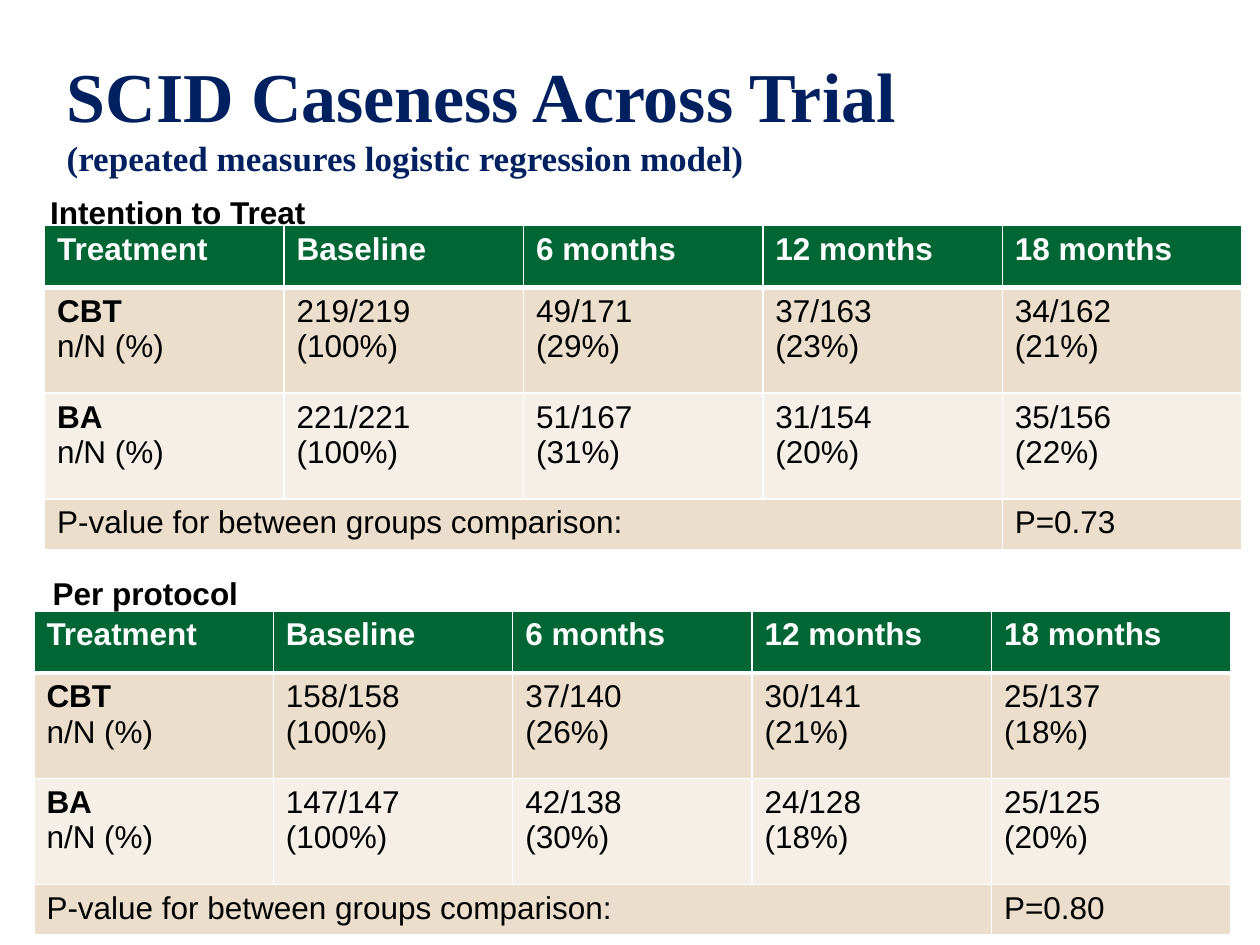
from dataclasses import dataclass

import pptx
import pptx.dml.color
import pptx.enum.text
import pptx.oxml
import pptx.oxml.ns
import pptx.util
from lxml import etree

Pt = pptx.util.Pt


@dataclass(frozen=True)
class Theme:
    title_font: str = "Times New Roman"
    body_font: str = "Arial"
    navy: str = "002060"
    green: str = "006633"
    tan: str = "ECDECC"
    cream: str = "F6EFE7"
    white: str = "FFFFFF"
    black: str = "000000"
    title_size: float = 40
    subtitle_size: float = 20
    body_size: float = 18
    thin_line: float = 1
    thick_line: float = 3


@dataclass(frozen=True)
class Analysis:
    label: str
    label_left: float
    label_top: float
    table_left: float
    table_top: float
    cbt: tuple[str, ...]
    ba: tuple[str, ...]
    p_value: str


THEME = Theme()
HEADER = ("Treatment", "Baseline", "6 months", "12 months", "18 months")
COLUMN_WIDTH = 136.8
ROW_HEIGHTS = (35.3, 60.5, 60.5, 23)
ROW_FILLS = (THEME.green, THEME.tan, THEME.cream, THEME.tan)
TABLE_HEIGHT = 185

ANALYSES = (
    Analysis("Intention to Treat", 21.6, 106.6, 25.5, 128.9,
             ("219/219\n(100%)", "49/171\n(29%)", "37/163\n(23%)", "34/162\n(21%)"),
             ("221/221\n(100%)", "51/167\n(31%)", "31/154\n(20%)", "35/156\n(22%)"),
             "P=0.73"),
    Analysis("Per protocol", 23, 324.7, 19.4, 349.2,
             ("158/158\n(100%)", "37/140\n(26%)", "30/141\n(21%)", "25/137\n(18%)"),
             ("147/147\n(100%)", "42/138\n(30%)", "24/128\n(18%)", "25/125\n(20%)"),
             "P=0.80"),
)


def set_font(paragraph, name: str, color: str, bold: bool, size: float | None = None) -> None:
    font = paragraph.font
    font.name = name
    font.bold = bold
    font.color.rgb = pptx.dml.color.RGBColor.from_string(color)
    if size is not None:
        font.size = Pt(size)


def add_text_box(slide, left: float, top: float, width: float, height: float):
    shape = slide.shapes.add_textbox(Pt(left), Pt(top), Pt(width), Pt(height))
    shape.text_frame.word_wrap = True
    return shape.text_frame


def add_title(slide) -> None:
    frame = add_text_box(slide, 31, 20.9, 671.8, 90)
    frame.vertical_anchor = pptx.enum.text.MSO_ANCHOR.MIDDLE
    paragraph = frame.paragraphs[0]
    set_font(paragraph, THEME.title_font, THEME.navy, True)
    title = paragraph.add_run()
    title.text = "SCID Caseness Across Trial"
    title.font.size = Pt(THEME.title_size)
    paragraph.add_line_break()
    subtitle = paragraph.add_run()
    subtitle.text = "(repeated measures logistic regression model)"
    subtitle.font.size = Pt(THEME.subtitle_size)


def set_borders(cell, top: float, bottom: float) -> None:
    properties = cell._tc.get_or_add_tcPr()
    widths = {"L": THEME.thin_line, "R": THEME.thin_line, "T": top, "B": bottom}
    for side, width in widths.items():
        line = etree.SubElement(properties, pptx.oxml.ns.qn(f"a:ln{side}"), w=str(Pt(width)))
        fill = etree.SubElement(line, pptx.oxml.ns.qn("a:solidFill"))
        etree.SubElement(fill, pptx.oxml.ns.qn("a:srgbClr"), val=THEME.white)


def style_cell(cell, row: int, column: int) -> None:
    # The thick rule lies between the header and the first data row
    set_borders(cell,
                top=THEME.thick_line if row == 1 else THEME.thin_line,
                bottom=THEME.thick_line if row == 0 else THEME.thin_line)
    cell.fill.solid()
    cell.fill.fore_color.rgb = pptx.dml.color.RGBColor.from_string(ROW_FILLS[row])
    color = THEME.white if row == 0 else THEME.black
    for index, paragraph in enumerate(cell.text_frame.paragraphs):
        is_group_name = row in (1, 2) and column == 0 and index == 0
        set_font(paragraph, THEME.body_font, color, row == 0 or is_group_name,
                 THEME.body_size)


def add_analysis(slide, analysis: Analysis) -> None:
    # Table
    rows = (
        HEADER,
        ("CBT\nn/N (%)", *analysis.cbt),
        ("BA\nn/N (%)", *analysis.ba),
        ("P-value for between groups comparison:", "", "", "", analysis.p_value),
    )
    shape = slide.shapes.add_table(
        len(rows), len(HEADER), Pt(analysis.table_left), Pt(analysis.table_top),
        Pt(COLUMN_WIDTH * len(HEADER)), Pt(TABLE_HEIGHT))
    table = shape.table
    for column in table.columns:
        column.width = Pt(COLUMN_WIDTH)
    for row, height in zip(table.rows, ROW_HEIGHTS):
        row.height = Pt(height)
    shape.height = Pt(TABLE_HEIGHT)
    for row_index, texts in enumerate(rows):
        for column_index, text in enumerate(texts):
            cell = table.cell(row_index, column_index)
            cell.text = text
            style_cell(cell, row_index, column_index)
    table.cell(3, 0).merge(table.cell(3, 3))

    # Label above the table
    frame = add_text_box(slide, analysis.label_left, analysis.label_top, 294.5, 28.8)
    frame.auto_size = pptx.enum.text.MSO_AUTO_SIZE.SHAPE_TO_FIT_TEXT
    paragraph = frame.paragraphs[0]
    paragraph.text = analysis.label
    set_font(paragraph, THEME.body_font, THEME.black, True, THEME.body_size)


def main() -> None:
    presentation = pptx.Presentation()
    presentation.slide_width = Pt(720)
    presentation.slide_height = Pt(540)
    slide = presentation.slides.add_slide(presentation.slide_layouts[6])
    add_title(slide)
    for analysis in ANALYSES:
        add_analysis(slide, analysis)
    presentation.save("out.pptx")


if __name__ == "__main__":
    main()
